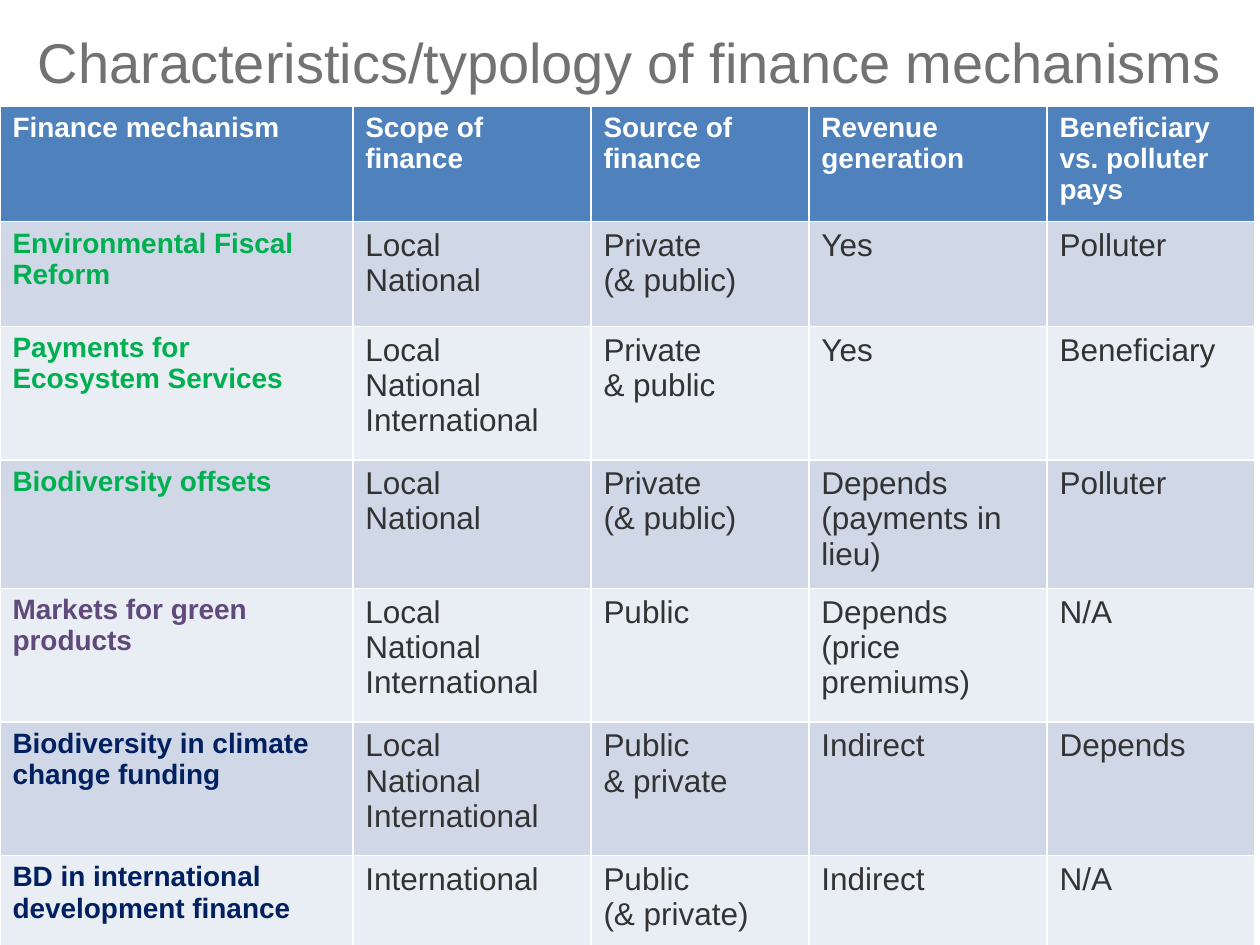
from pptx import Presentation
from pptx.dml.color import RGBColor
from pptx.enum.text import MSO_ANCHOR, PP_ALIGN
from pptx.util import Inches, Pt

FONT = "Arial"
WHITE = RGBColor(0xFF, 0xFF, 0xFF)
GREY = RGBColor(0x72, 0x72, 0x72)
DARK = RGBColor(0x33, 0x33, 0x33)
BLUE = RGBColor(0x4F, 0x81, 0xBD)
BANDS = RGBColor(0xD0, 0xD8, 0xE8), RGBColor(0xE9, 0xED, 0xF4)
GREEN = RGBColor(0x00, 0xB0, 0x50)
PURPLE = RGBColor(0x60, 0x4A, 0x7B)
NAVY = RGBColor(0x00, 0x20, 0x60)

TITLE = "Characteristics/typology of finance mechanisms"
WIDTHS = [2.8, 1.89, 1.73, 1.89, 1.65]
HEIGHTS = [0.92, 0.83, 1.06, 1.02, 1.06, 1.06, 0.82]
HEADS = ["Finance mechanism", "Scope of finance", "Source of finance",
         "Revenue generation", "Beneficiary vs. polluter pays"]
TWO = "Local\nNational"
THREE = "Local\nNational\nInternational"
ROWS = [
    (GREEN, "Environmental Fiscal Reform", TWO, "Private\n(& public)",
     "Yes", "Polluter"),
    (GREEN, "Payments for Ecosystem Services", THREE, "Private\n& public",
     "Yes", "Beneficiary"),
    (GREEN, "Biodiversity offsets", TWO, "Private\n(& public)",
     "Depends (payments in lieu)", "Polluter"),
    (PURPLE, "Markets for green products", THREE, "Public",
     "Depends\n(price premiums)", "N/A"),
    (NAVY, "Biodiversity in climate change funding", THREE,
     "Public\n& private", "Indirect", "Depends"),
    (NAVY, "BD in international development finance", "International",
     "Public\n(& private)", "Indirect", "N/A"),
]


def write(frame, text, size=18, color=DARK, bold=False, align=PP_ALIGN.LEFT):
    """Fill a text frame, one paragraph to a line of text."""
    frame.text = text
    for para in frame.paragraphs:
        para.alignment = align
        for run in para.runs:
            font = run.font
            font.name, font.size, font.bold = FONT, Pt(size), bold
            font.color.rgb = color


def add_title(slide):
    box = slide.shapes.add_textbox(Inches(0), Inches(0.13),
                                   Inches(10), Inches(0.71))
    frame = box.text_frame
    frame.word_wrap = True
    frame.vertical_anchor = MSO_ANCHOR.MIDDLE
    write(frame, TITLE, size=32, color=GREY, align=PP_ALIGN.CENTER)


def fill_cell(cell, text, fill, **style):
    cell.fill.solid()
    cell.fill.fore_color.rgb = fill
    write(cell.text_frame, text, **style)


def add_grid(slide):
    """Add the table; its default style draws the white borders."""
    table = slide.shapes.add_table(
        len(HEIGHTS), len(WIDTHS), Inches(0), Inches(0.84),
        Inches(sum(WIDTHS)), Inches(sum(HEIGHTS))).table
    for col, width in zip(table.columns, WIDTHS):
        col.width = Inches(width)
    for row, height in zip(table.rows, HEIGHTS):
        row.height = Inches(height)
    for c, head in enumerate(HEADS):
        fill_cell(table.cell(0, c), head, BLUE,
                  size=16, color=WHITE, bold=True)
    for r, (color, name, *values) in enumerate(ROWS, 1):
        band = BANDS[(r - 1) % 2]
        fill_cell(table.cell(r, 0), name, band,
                  size=16, color=color, bold=True)
        for c, value in enumerate(values, 1):
            fill_cell(table.cell(r, c), value, band)


def main():
    deck = Presentation()
    deck.slide_width, deck.slide_height = Inches(10), Inches(7.5)
    slide = deck.slides.add_slide(deck.slide_layouts[6])
    add_grid(slide)
    add_title(slide)
    deck.save("out.pptx")


if __name__ == "__main__":
    main()
